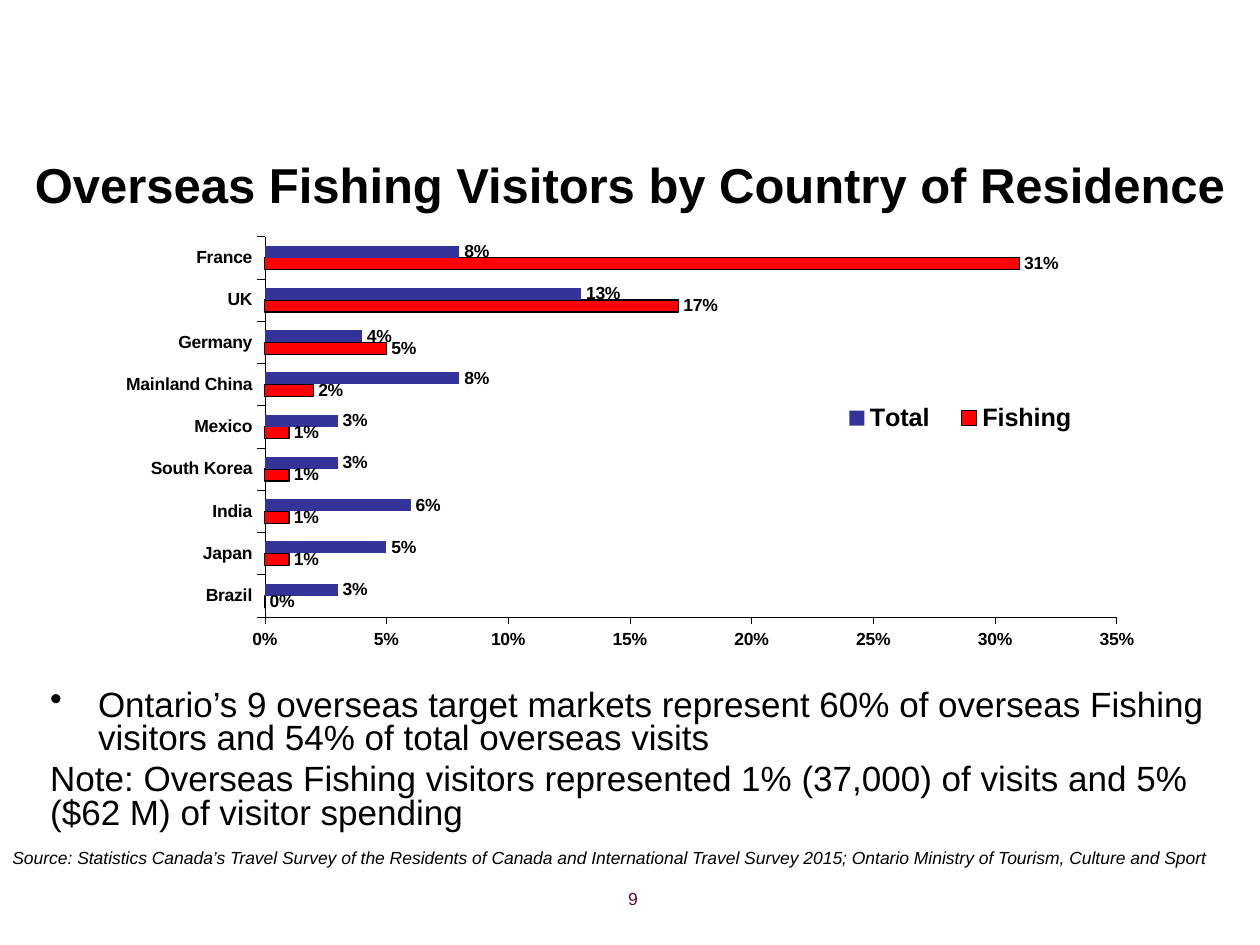
import pptx
import pptx.util
import pptx.dml.color
import pptx.chart.data
import pptx.enum.chart
import pptx.enum.text
import pptx.oxml
import pptx.oxml.ns

Inches = pptx.util.Inches
Pt = pptx.util.Pt
ALIGN = pptx.enum.text.PP_ALIGN
MARKETS = [
    ("Brazil", 0, 0.03),
    ("Japan", 0.01, 0.05),
    ("India", 0.01, 0.06),
    ("South Korea", 0.01, 0.03),
    ("Mexico", 0.01, 0.03),
    ("Mainland China", 0.02, 0.08),
    ("Germany", 0.05, 0.04),
    ("UK", 0.17, 0.13),
    ("France", 0.31, 0.08),
]


def color(code):
    """Turn a hex string into a colour."""
    return pptx.dml.color.RGBColor.from_string(code)


def style(font, size, code="000000", bold=False, italic=False):
    """Set the look of a font."""
    font.name = "Arial"
    font.size = Pt(size)
    font.bold = bold
    font.italic = italic
    font.color.rgb = color(code)


def add_text(slide, box, lines, size, align=ALIGN.LEFT, middle=False, **look):
    """Add a wrapped text box and return its paragraphs."""
    frame = slide.shapes.add_textbox(*map(Inches, box)).text_frame
    frame.word_wrap = True
    if middle:
        frame.vertical_anchor = pptx.enum.text.MSO_ANCHOR.MIDDLE
    frame.text = "\n".join(lines)
    for para in frame.paragraphs:
        para.alignment = align
        for run in para.runs:
            style(run.font, size, **look)
    return frame.paragraphs


def add_bullet(para, indent):
    """Give a paragraph a hanging bullet."""
    props = para._p.get_or_add_pPr()
    props.set("marL", str(Inches(indent)))
    props.set("indent", str(-Inches(indent)))
    mark = pptx.oxml.ns.nsdecls("a")
    props.append(pptx.oxml.parse_xml(f'<a:buChar {mark} char="•"/>'))


def place(part, index, area, inner=False):
    """Fix a chart part at fractions of the chart area."""
    for old in part.findall(pptx.oxml.ns.qn("c:layout")):
        part.remove(old)
    rows = '<c:layoutTarget val="inner"/>' if inner else ""
    rows += '<c:xMode val="edge"/><c:yMode val="edge"/>'
    rows += "".join(f'<c:{key} val="{val}"/>' for key, val in zip("xywh", area))
    space = pptx.oxml.ns.nsdecls("c")
    part.insert(index, pptx.oxml.parse_xml(
        f"<c:layout {space}><c:manualLayout>{rows}</c:manualLayout></c:layout>"))


def style_axis(axis):
    """Set the line, ticks and labels of an axis."""
    axis.has_major_gridlines = False
    axis.major_tick_mark = pptx.enum.chart.XL_TICK_MARK.OUTSIDE
    axis.minor_tick_mark = pptx.enum.chart.XL_TICK_MARK.NONE
    axis.format.line.color.rgb = color("000000")
    axis.format.line.width = Pt(0.17)
    style(axis.tick_labels.font, 10, bold=True)


def style_bars(bars, code, edge):
    """Set the fill, outline and labels of a series."""
    bars.invert_if_negative = False
    bars.format.fill.solid()
    bars.format.fill.fore_color.rgb = color(code)
    if edge:
        bars.format.line.color.rgb = color("000000")
        bars.format.line.width = Pt(0.68)
    else:
        bars.format.line.fill.background()
    labels = bars.data_labels
    labels.show_value = True
    labels.number_format = "0%"
    labels.number_format_is_linked = False
    labels.position = pptx.enum.chart.XL_LABEL_POSITION.OUTSIDE_END
    style(labels.font, 10, bold=True)


def add_bars(slide, box):
    """Add the bar chart of visitor shares."""
    names, fishing, total = zip(*MARKETS)
    data = pptx.chart.data.CategoryChartData(number_format="0%")
    data.categories = names
    data.add_series("Fishing", fishing)
    data.add_series("Total", total)
    kind = pptx.enum.chart.XL_CHART_TYPE.BAR_CLUSTERED
    chart = slide.shapes.add_chart(kind, *map(Inches, box), data).chart
    chart.has_title = False
    style(chart.font, 14.4, bold=True)
    plot = chart.plots[0]
    plot.gap_width = 150
    plot.overlap = 0
    plot.vary_by_categories = False
    for bars, code, edge in zip(plot.series, ("FF0000", "333399"), (True, False)):
        style_bars(bars, code, edge)
    style_axis(chart.category_axis)
    scale = chart.value_axis
    style_axis(scale)
    scale.minimum_scale = 0
    scale.maximum_scale = 0.35
    scale.major_unit = 0.05
    scale.tick_labels.number_format = "0%"
    scale.tick_labels.number_format_is_linked = False
    chart.has_legend = True
    legend = chart.legend
    legend.position = pptx.enum.chart.XL_LEGEND_POSITION.RIGHT
    legend.include_in_layout = False
    style(legend.font, 14.4, bold=True)
    place(legend._element, 1, (0.7, 0.39, 0.25, 0.1))
    place(plot._element.getparent(), 0, (0.18, 0.02, 0.79, 0.88), inner=True)


def main():
    """Build the slide and save it."""
    deck = pptx.Presentation()
    deck.slide_width, deck.slide_height = Inches(10), Inches(7.5)
    slide = deck.slides.add_slide(deck.slide_layouts[6])
    add_text(slide, (0, 1.17, 10, 0.58),
             ["Overseas Fishing Visitors by Country of Residence"],
             28, ALIGN.CENTER, middle=True, bold=True)
    notes = add_text(slide, (0.3, 5.43, 9.36, 1.33), [
        "Ontario’s 9 overseas target markets represent 60% of overseas Fishing "
        "visitors and 54% of total overseas visits",
        "Note: Overseas Fishing visitors represented 1% (37,000) of visits and 5% "
        "($62 M) of visitor spending"], 20)
    for para in notes:
        para.line_spacing = 0.8
    notes[1].space_before = Pt(4)
    add_bullet(notes[0], 0.38)
    add_bars(slide, (0.56, 1.81, 8.56, 3.43))
    add_text(slide, (2.83, 7, 2.33, 0.35), ["9"], 10, ALIGN.RIGHT, code="660033")
    add_text(slide, (0, 6.67, 9.8, 0.27), [
        "Source: Statistics Canada’s Travel Survey of the Residents of Canada and "
        "International Travel Survey 2015; Ontario Ministry of Tourism, Culture "
        "and Sport"], 10, italic=True)
    deck.save("out.pptx")


if __name__ == "__main__":
    main()
